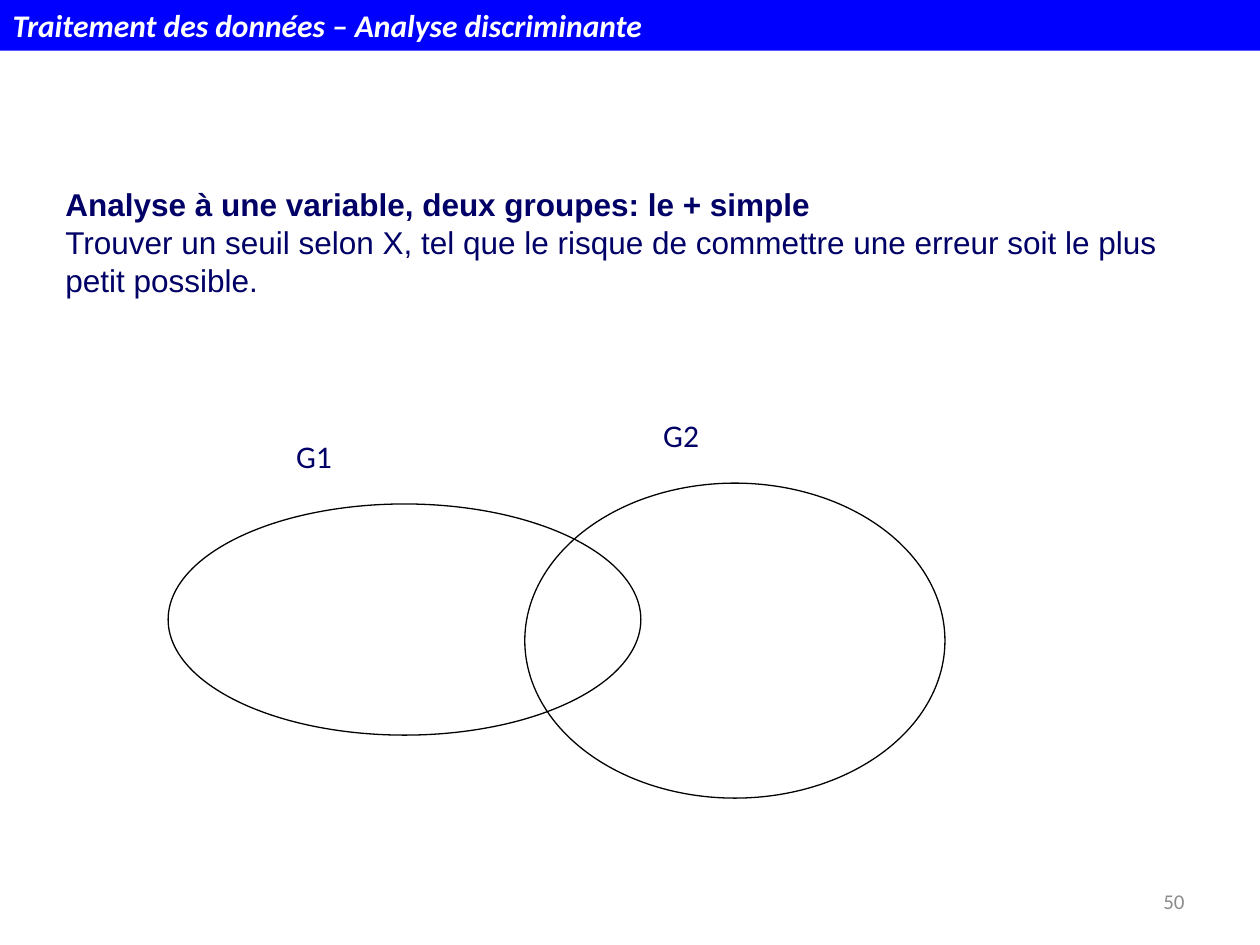
from dataclasses import dataclass, field

from pptx import Presentation
from pptx.dml.color import RGBColor
from pptx.enum.shapes import MSO_SHAPE
from pptx.enum.text import MSO_ANCHOR, MSO_AUTO_SIZE, PP_ALIGN
from pptx.util import Cm, Pt

NAVY, BLUE, WHITE, BLACK, GREY = "000066", "0000FF", "FFFFFF", "000000", "8C8C8C"


@dataclass
class Box:
    left: float
    top: float
    width: float
    height: float

    def cm(self) -> list:
        return [Cm(n) for n in (self.left, self.top, self.width, self.height)]


@dataclass
class Line:
    text: str
    font: dict = field(default_factory=dict)


@dataclass
class Group:
    name: str
    label: Box
    oval: Box


BODY = [
    Line("Analyse à une variable, deux groupes: le + simple",
         {"name": "Arial", "bold": True}),
    Line("Trouver un seuil selon X, tel que le risque de commettre une erreur "
         "soit le plus petit possible.", {"name": "Arial"}),
]
GROUPS = [
    Group("G1", Box(5.72, 8.68, 1.55, 1.27), Box(3.39, 10.16, 9.53, 4.66)),
    Group("G2", Box(13.12, 8.26, 1.55, 1.27), Box(10.58, 9.74, 8.47, 6.35)),
]


def paint(part, color: str) -> None:
    """Give a fill a solid colour."""
    part.solid()
    part.fore_color.rgb = RGBColor.from_string(color)


def write(frame, lines: list[Line], color: str = NAVY,
          align=PP_ALIGN.LEFT, **form) -> None:
    """Fill a text frame; form holds frame attributes."""
    form = {"word_wrap": True, "vertical_anchor": MSO_ANCHOR.TOP,
            "auto_size": MSO_AUTO_SIZE.NONE} | form
    for key, value in form.items():
        setattr(frame, key, value)
    for i, line in enumerate(lines):
        para = frame.add_paragraph() if i else frame.paragraphs[0]
        para.alignment = align
        run = para.add_run()
        run.text = line.text
        font = {"name": "Calibri", "size": Pt(18), "bold": False} | line.font
        for key, value in font.items():
            setattr(run.font, key, value)
        paint(run.font.fill, color)


def add_title(slide, text: str) -> None:
    title = slide.shapes.title
    title.left, title.top, title.width, title.height = Box(0, 0, 25.4, 1.02).cm()
    paint(title.fill, BLUE)
    write(title.text_frame, [Line(text, {"bold": True, "italic": True})], WHITE)


def add_text(slide, box: Box, lines: list[Line], **form) -> None:
    write(slide.shapes.add_textbox(*box.cm()).text_frame, lines, **form)


def add_oval(slide, box: Box) -> None:
    oval = slide.shapes.add_shape(MSO_SHAPE.OVAL, *box.cm())
    oval.shadow.inherit = False
    oval.fill.background()
    oval.line.width = Pt(0.75)
    paint(oval.line.fill, BLACK)


def main() -> None:
    deck = Presentation()
    deck.slide_width, deck.slide_height = Cm(25.4), Cm(19.05)
    slide = deck.slides.add_slide(deck.slide_layouts[5])
    add_title(slide, "Traitement des données – Analyse discriminante")
    add_text(slide, Box(1.07, 3.61, 23.75, 4.32), BODY)
    for group in GROUPS:
        add_oval(slide, group.oval)
        add_text(slide, group.label, [Line(group.name)], word_wrap=False)
    add_text(slide, Box(18.2, 17.65, 5.93, 1.02), [Line("50", {"size": Pt(12)})],
             color=GREY, align=PP_ALIGN.RIGHT, vertical_anchor=MSO_ANCHOR.MIDDLE)
    deck.save("out.pptx")


if __name__ == "__main__":
    main()
